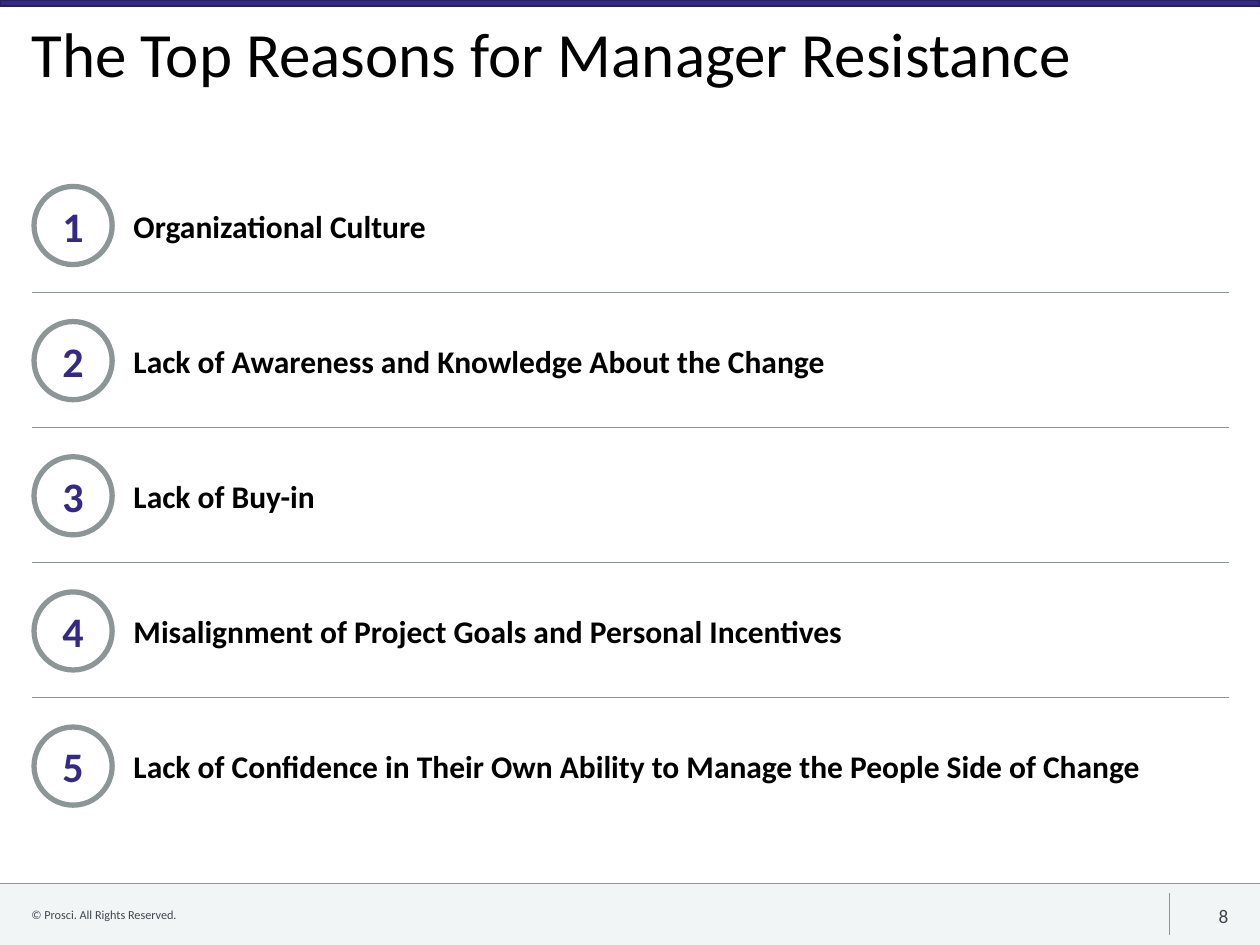
"""Build the slide on the top reasons for manager resistance."""
from lxml import etree
from pptx import Presentation
from pptx.dml.color import RGBColor
from pptx.enum.shapes import MSO_CONNECTOR, MSO_SHAPE
from pptx.enum.text import MSO_ANCHOR, MSO_AUTO_SIZE, PP_ALIGN
from pptx.oxml.ns import qn
from pptx.util import Inches, Pt

STRAIGHT = MSO_CONNECTOR.STRAIGHT
RECTANGLE, OVAL = MSO_SHAPE.RECTANGLE, MSO_SHAPE.OVAL
TOP, MIDDLE = MSO_ANCHOR.TOP, MSO_ANCHOR.MIDDLE
LEFT, CENTER, RIGHT = PP_ALIGN.LEFT, PP_ALIGN.CENTER, PP_ALIGN.RIGHT
NO_AUTOFIT = MSO_AUTO_SIZE.NONE

FONT = "Calibri"
BLACK, GRAY, DARK_GRAY = "000000", "8C9696", "3F474F"
PURPLE, DEEP_PURPLE, PALE = "342A86", "261F63", "F2F5F5"

REASONS = [
    "Organizational Culture",
    "Lack of Awareness and Knowledge About the Change",
    "Lack of Buy-in",
    "Misalignment of Project Goals and Personal Incentives",
    "Lack of Confidence in Their Own Ability to Manage the People Side of Change",
]
FIRST_TOP, LAST_TOP = 1.48, 5.77
PITCH = (LAST_TOP - FIRST_TOP) / (len(REASONS) - 1)
MARGIN, WIDTH, FOOTER_TOP = 0.25, 10, 7.01


def rgb(hex_color):
    """Turn a hex string into a colour."""
    return RGBColor.from_string(hex_color)


def write(frame, text, size, color, bold=False, align=LEFT, anchor=MIDDLE, insets=(0, 0, 0, 0)):
    """Put one formatted paragraph into a text frame."""
    frame.auto_size = NO_AUTOFIT
    frame.word_wrap = True
    frame.vertical_anchor = anchor
    frame.margin_left, frame.margin_top, frame.margin_right, frame.margin_bottom = map(Inches, insets)
    frame.text = text
    paragraph = frame.paragraphs[0]
    paragraph.alignment = align
    font = paragraph.font
    font.name, font.size, font.bold = FONT, Pt(size), bold
    font.color.rgb = rgb(color)


def add_label(shapes, box, text, size, color, **style):
    """Add a text box."""
    label = shapes.add_textbox(*map(Inches, box))
    write(label.text_frame, text, size, color, **style)


def add_band(shapes, top, height, fill, outline=None):
    """Add a full-width colour band."""
    band = shapes.add_shape(RECTANGLE, 0, Inches(top), Inches(WIDTH), Inches(height))
    band.shadow.inherit = False
    band.fill.solid()
    band.fill.fore_color.rgb = rgb(fill)
    if outline:
        band.line.color.rgb = rgb(outline)
        band.line.width = Pt(1)
    else:
        band.line.fill.background()


def add_rule(shapes, x1, y1, x2, y2):
    """Add a thin gray line."""
    rule = shapes.add_connector(STRAIGHT, *map(Inches, (x1, y1, x2, y2)))
    rule.line.color.rgb = rgb(GRAY)
    rule.line.width = Pt(0.5)
    etree.SubElement(rule._element.spPr, qn("a:effectLst"))


def add_reason(shapes, number, reason, top):
    """Add a reason with its circled number as one group."""
    members = shapes.add_group_shape().shapes
    add_label(members, (1.06, top + 0.16, 8.36, 0.3), reason, 18, BLACK, bold=True)
    circle = members.add_shape(OVAL, *map(Inches, (0.27, top, 0.62, 0.62)))
    circle.shadow.inherit = False
    circle.fill.background()
    circle.line.color.rgb = rgb(GRAY)
    circle.line.width = Pt(3)
    write(circle.text_frame, str(number), 24, PURPLE, bold=True, align=CENTER,
          insets=(0.1, 0.05, 0.1, 0.05))


def add_title(slide, text):
    """Place and fill the title placeholder."""
    title = slide.shapes.title
    title.left, title.top, title.width, title.height = map(Inches, (MARGIN, 0.13, 9.5, 0.9))
    write(title.text_frame, text, 36, BLACK, anchor=TOP, insets=(0, 0.05, 0, 0.05))
    title.text_frame.paragraphs[0].line_spacing = 0.9


def add_frame(shapes):
    """Add the top band and the footer."""
    add_band(shapes, FOOTER_TOP, 0.49, PALE)
    add_band(shapes, 0, 0.05, PURPLE, DEEP_PURPLE)
    add_rule(shapes, 0, FOOTER_TOP, WIDTH, FOOTER_TOP)
    add_rule(shapes, 9.28, 7.09, 9.28, 7.42)
    add_label(shapes, (MARGIN, 7.15, 7.34, 0.22), "© Prosci. All Rights Reserved.", 7, DARK_GRAY,
              insets=(0, 0.05, 0.1, 0.05))
    add_label(shapes, (9.26, 7.16, 0.49, 0.21), "8", 11, DARK_GRAY, align=RIGHT)


def main():
    """Build and save the slide."""
    deck = Presentation()
    deck.slide_width, deck.slide_height = Inches(WIDTH), Inches(7.5)
    slide = deck.slides.add_slide(deck.slide_layouts[5])
    shapes = slide.shapes
    add_frame(shapes)
    add_title(slide, "The Top Reasons for Manager Resistance")
    for index, reason in enumerate(REASONS):
        top = FIRST_TOP + index * PITCH
        add_reason(shapes, index + 1, reason, top)
        if index < len(REASONS) - 1:
            divider = top + 0.84
            add_rule(shapes, MARGIN, divider, WIDTH - MARGIN, divider)
    deck.save("out.pptx")


if __name__ == "__main__":
    main()
